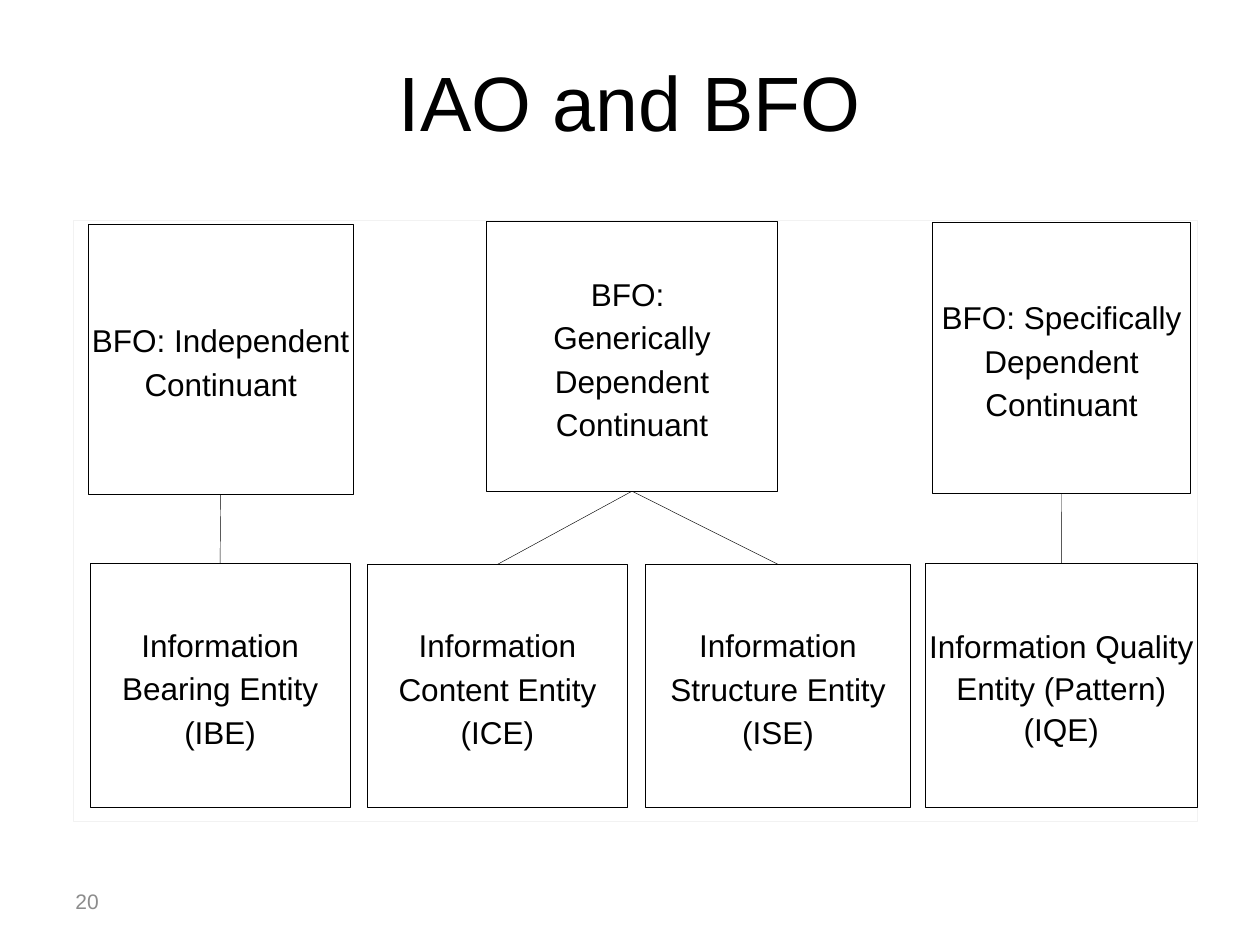
from lxml.etree import SubElement
from pptx import Presentation
from pptx.dml.color import RGBColor
from pptx.enum.shapes import MSO_CONNECTOR, MSO_SHAPE
from pptx.enum.text import MSO_ANCHOR, PP_ALIGN
from pptx.oxml.ns import qn
from pptx.util import Pt

COLORS = {"ink": "000000", "frame": "F2F2F2", "number": "8C8C8C"}
FONT = "Arial"
TITLE = "IAO and BFO"
PAGE_NUMBER = "20"
FRAME = (42, 126, 642.5, 343.5)
BOTTOM, TOP = 2, 0

# key: (text, (left, top, width, height), line spacing, space before)
ENTITIES = {
    "GDC": ("BFO: \vGenerically Dependent Continuant", (278, 126.3, 166.3, 154.4), 1.15, 3),
    "IC": ("BFO: Independent Continuant", (50.4, 128.2, 151.4, 154.2), 1.15, 3),
    "SDC": ("BFO: Specifically Dependent Continuant", (532.8, 127, 147.6, 155), 1.15, 3),
    "ICE": ("Information Content Entity (ICE)", (210, 322.5, 148.6, 139), 1.15, 7),
    "IQE": ("Information Quality Entity (Pattern) (IQE)", (529, 322, 155, 139.5), 1.1, 2),
    "ISE": ("Information Structure Entity (ISE)", (368.8, 322.5, 151.6, 139), 1.15, 7),
    "IBE": ("Information Bearing Entity (IBE)", (51.6, 322, 148.4, 139.5), 1.15, 7),
}
LINKS = [("GDC", "ISE"), ("GDC", "ICE"), ("SDC", "IQE"), ("IC", "IBE")]


def rgb(name):
    return RGBColor.from_string(COLORS[name])


def write(frame, text, size, color="ink", align=PP_ALIGN.CENTER, inset=None,
          spacing=None, before=None, after=None):
    frame.word_wrap = True
    frame.vertical_anchor = MSO_ANCHOR.MIDDLE
    if inset is not None:
        frame.margin_left = frame.margin_right = Pt(inset)
        frame.margin_top = frame.margin_bottom = Pt(inset)
    paragraph = frame.paragraphs[0]
    paragraph.text = text
    paragraph.alignment = align
    if spacing is not None:
        paragraph.line_spacing = spacing
    if before is not None:
        paragraph.space_before = Pt(before)
    if after is not None:
        paragraph.space_after = Pt(after)
    for run in paragraph.runs:
        run.font.name = FONT
        run.font.size = Pt(size)
        run.font.color.rgb = rgb(color)


def add_outline(slide, area, color, weight):
    outline = slide.shapes.add_shape(MSO_SHAPE.RECTANGLE, *map(Pt, area))
    outline.shadow.inherit = False
    outline.fill.background()
    outline.line.color.rgb = rgb(color)
    outline.line.width = Pt(weight)
    return outline


def add_link(slide, parent, child):
    link = slide.shapes.add_connector(MSO_CONNECTOR.STRAIGHT, 0, 0, 0, 0)
    link.begin_connect(parent, BOTTOM)
    link.end_connect(child, TOP)
    link.line.color.rgb = rgb("ink")
    link.line.width = Pt(0.25)
    SubElement(link._element.spPr, qn("a:effectLst"))


def main():
    deck = Presentation()
    deck.slide_width, deck.slide_height = Pt(720), Pt(540)
    slide = deck.slides.add_slide(deck.slide_layouts[5])

    title = slide.shapes.title
    title.left, title.top, title.width, title.height = map(Pt, (36, 12.5, 648, 90))
    write(title.text_frame, TITLE, 44)

    add_outline(slide, FRAME, "frame", 0.75)
    boxes = {}
    for key, (text, area, spacing, before) in ENTITIES.items():
        boxes[key] = add_outline(slide, area, "ink", 0.25)
        write(boxes[key].text_frame, text, 18, inset=0,
              spacing=spacing, before=before, after=10)
    for parent, child in LINKS:
        add_link(slide, boxes[parent], boxes[child])

    number = slide.shapes.add_textbox(*map(Pt, (36, 500.5, 168, 28.75)))
    write(number.text_frame, PAGE_NUMBER, 12, color="number", align=PP_ALIGN.LEFT)

    deck.save("out.pptx")


if __name__ == "__main__":
    main()
